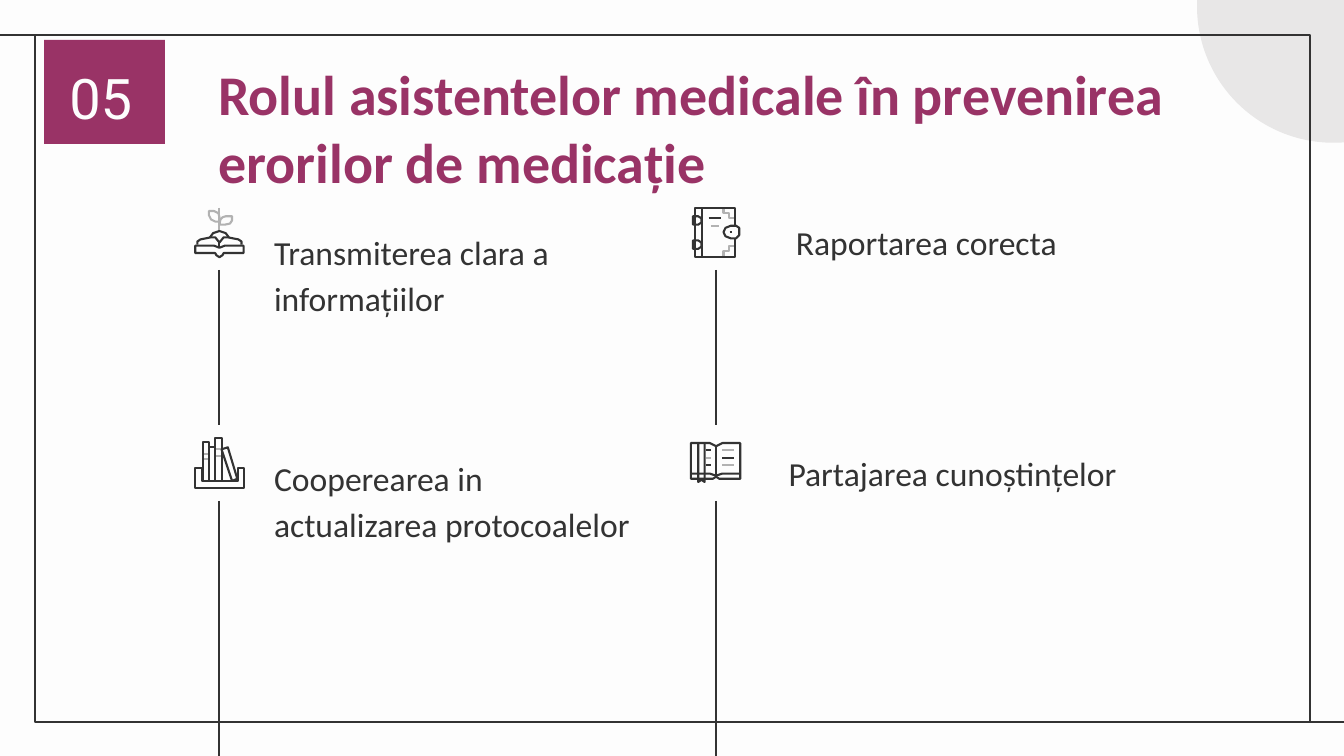
from pptx import Presentation
from pptx.dml.color import RGBColor
from pptx.enum.shapes import MSO_CONNECTOR, MSO_SHAPE
from pptx.enum.text import MSO_ANCHOR, PP_ALIGN
from pptx.oxml.ns import qn
from pptx.util import Pt

PX = 9525
LINE, RECT, OVAL = MSO_CONNECTOR.STRAIGHT, MSO_SHAPE.RECTANGLE, MSO_SHAPE.OVAL
TOP, MID, LEFT = MSO_ANCHOR.TOP, MSO_ANCHOR.MIDDLE, PP_ALIGN.LEFT
INK, PALE, GREY, PLUM, PEARL = "333333", "FDFDFD", "B2B2B2", "993366", "E8E7E7"
SLOT = 72  # side of an icon slot


def color(code):
    return RGBColor.from_string(code)


class Deck:
    font = "Calibri"
    weight = Pt(1.5)

    def __init__(self, wide, high):
        self.file = Presentation()
        self.file.slide_width, self.file.slide_height = wide * PX, high * PX
        self.slide = self.file.slides.add_slide(self.file.slide_layouts[6])
        self.items = self.slide.shapes
        back = self.slide.background.fill
        back.solid()
        back.fore_color.rgb = color(PALE)

    def paint(self, item, fill=None, line=None):
        item.shadow.inherit = False
        if fill:
            item.fill.solid()
            item.fill.fore_color.rgb = color(fill)
        else:
            item.fill.background()
        if line:
            item.line.color.rgb = color(line)
            item.line.width = self.weight
        else:
            item.line.fill.background()

    def shape(self, kind, box, fill=None, line=None):
        item = self.items.add_shape(kind, *(n * PX for n in box))
        self.paint(item, fill, line)
        return item

    def line(self, start, end, ink=INK):
        item = self.items.add_connector(LINE, *(n * PX for n in start + end))
        item.line.color.rgb = color(ink)
        item.line.width = self.weight
        props = item._element.spPr
        props.append(props.makeelement(qn("a:effectLst"), {}))
        return item

    def stroke(self, spot, pts, ink):
        pts = [(spot[0] + x, spot[1] + y) for x, y in pts]
        if len(pts) == 2:
            self.line(*pts, ink)
            return
        pen = self.items.build_freeform(*pts[0], scale=PX)
        pen.add_line_segments(pts[1:], close=pts[0] == pts[-1])
        self.paint(pen.convert_to_shape(), line=ink)

    def label(self, item, text, size, ink, pads, font=None,
              bold=False, lead=1.0, anchor=TOP):
        frame = item.text_frame
        frame.word_wrap = True
        frame.vertical_anchor = anchor
        frame.margin_left, frame.margin_right = pads[0] * PX, pads[1] * PX
        frame.margin_top = frame.margin_bottom = pads[1] * PX
        frame.text = text
        para = frame.paragraphs[0]
        para.alignment = LEFT
        para.line_spacing = lead
        face = para.runs[0].font
        face.name, face.size, face.bold = font or self.font, Pt(size), bold
        face.color.rgb = color(ink)

    def text(self, box, text, size, ink, **style):
        item = self.items.add_textbox(*(n * PX for n in box))
        self.label(item, text, size, ink, (12, 12), **style)


def tab(y):
    return [(14, y), (19, y), (22, y + 2), (22, y + 6), (19, y + 8),
            (14, y + 8), (14, y)]


def block(x, y):
    return [(x, 53), (x, y), (x + 6, y), (x + 6, 53), (x, 53)]


def dash(x, y, wide):
    return [(x, y), (x + wide, y)]


# Icon strokes by colour, measured from the slot corner
SPROUT = {
    GREY: [
        [(36, 13), (36, 35)],
        [(26, 16), (31, 16), (35, 18), (36, 22), (36, 26), (32, 26),
         (28, 24), (26, 20), (26, 16)],
        [(36, 29), (37, 24), (39, 22), (42, 21), (48, 21), (48, 25),
         (46, 28), (41, 29), (36, 29)]],
    INK: [
        [(27, 41), (30, 37), (36, 35), (42, 37), (45, 41)],
        [(15, 48), (15, 45), (18, 43), (28, 41), (32, 41), (36, 46),
         (40, 41), (44, 41), (54, 43), (57, 45), (57, 48)],
        [(36, 46), (36, 50)],
        [(13, 49), (31, 49), (36, 51), (41, 49), (59, 49), (59, 56),
         (40, 56), (39, 58), (36, 60), (33, 58), (32, 56), (13, 56),
         (13, 49)]],
}
DIARY = {
    GREY: [
        [(43, 13), (43, 18), (48, 18), (48, 23), (54, 23)],
        [(43, 60), (43, 54), (48, 54), (48, 49), (54, 49)],
        dash(31, 30, 8)],
    INK: [
        [(54, 30), (54, 13), (16, 13), (16, 60), (54, 60), (54, 42)],
        [(23, 13), (23, 60)], tab(21), tab(44),
        [(55, 30), (58, 32), (58, 39), (55, 42), (50, 42), (45, 40),
         (43, 36), (45, 32), (50, 30), (55, 30)],
        dash(29, 23, 12), dash(49, 36, 2)],
}
SHELF = {
    GREY: [dash(20, 27, 6), dash(20, 32, 6), dash(32, 23, 6), dash(32, 29, 6)],
    INK: [
        block(20, 16), block(26, 21), block(32, 12),
        [(38, 23), (44, 21), (53, 51), (48, 53), (38, 23)],
        [(13, 41), (19, 41), (19, 53), (54, 53), (54, 41), (59, 41),
         (59, 60), (13, 60), (13, 41)]],
}
BOOK = {
    GREY: [dash(42, 24, 11), dash(42, 38, 11), dash(26, 31, 5)],
    INK: [
        dash(42, 31, 11), dash(26, 24, 5), dash(26, 38, 5),
        [(12, 17), (30, 17), (36, 20), (42, 17), (59, 17), (59, 51),
         (39, 51), (36, 49), (33, 51), (12, 51), (12, 17)],
        [(12, 46), (30, 46), (36, 48), (42, 46), (59, 46)],
        [(36, 20), (36, 48)],
        [(19, 17), (19, 54), (22, 52), (25, 54), (25, 17)]],
}

# Each column: left edge, then icon, text and text corner from top to bottom
COLS = [
    (173, [(SPROUT, "Transmiterea clara a informațiilor", (249, 203)),
           (SHELF, "Cooperearea in actualizarea protocoalelor", (249, 418))]),
    (646, [(DIARY, "Raportarea corecta", (746, 194)),
           (BOOK, "Partajarea cunoștințelor", (739, 414))]),
]
ROWS = (185, 405)


def main():
    deck = Deck(1280, 720)

    # Corner disc and frame
    deck.shape(OVAL, (1140, -124, 260, 260), PEARL)
    deck.shape(RECT, (33, 33, 1215, 655), line=INK)
    deck.line((34, 33), (-3, 33))
    deck.line((1284, 688), (1247, 688))

    # Title
    deck.text((196, 45, 1018, 157),
              "Rolul asistentelor medicale în prevenirea erorilor de medicație",
              40, PLUM, bold=True)

    # Icons with their texts and stems
    for x, cells in COLS:
        slots = []
        for y, (icon, text, spot) in zip(ROWS, cells):
            slots.append(deck.shape(RECT, (x, y, SLOT, SLOT), PALE))
            deck.text((*spot, 376, 128), text, 24, INK, lead=1.15)
            for ink, strokes in icon.items():
                for pts in strokes:
                    deck.stroke((x, y), pts, ink)
        mid = x + SLOT // 2
        stem = deck.line((mid, ROWS[0] + SLOT), (mid, ROWS[1]))
        stem.begin_connect(slots[0], 2)
        stem.end_connect(slots[1], 0)
        tail = deck.line((mid, ROWS[1] + SLOT), (mid, 725))
        tail.begin_connect(slots[1], 2)

    # Section number
    badge = deck.shape(RECT, (42, 38, 115, 99), PLUM)
    deck.label(badge, "05", 40, PALE, (24, 10), font="Roboto",
               lead=1.15, anchor=MID)

    deck.file.save("out.pptx")


if __name__ == "__main__":
    main()
